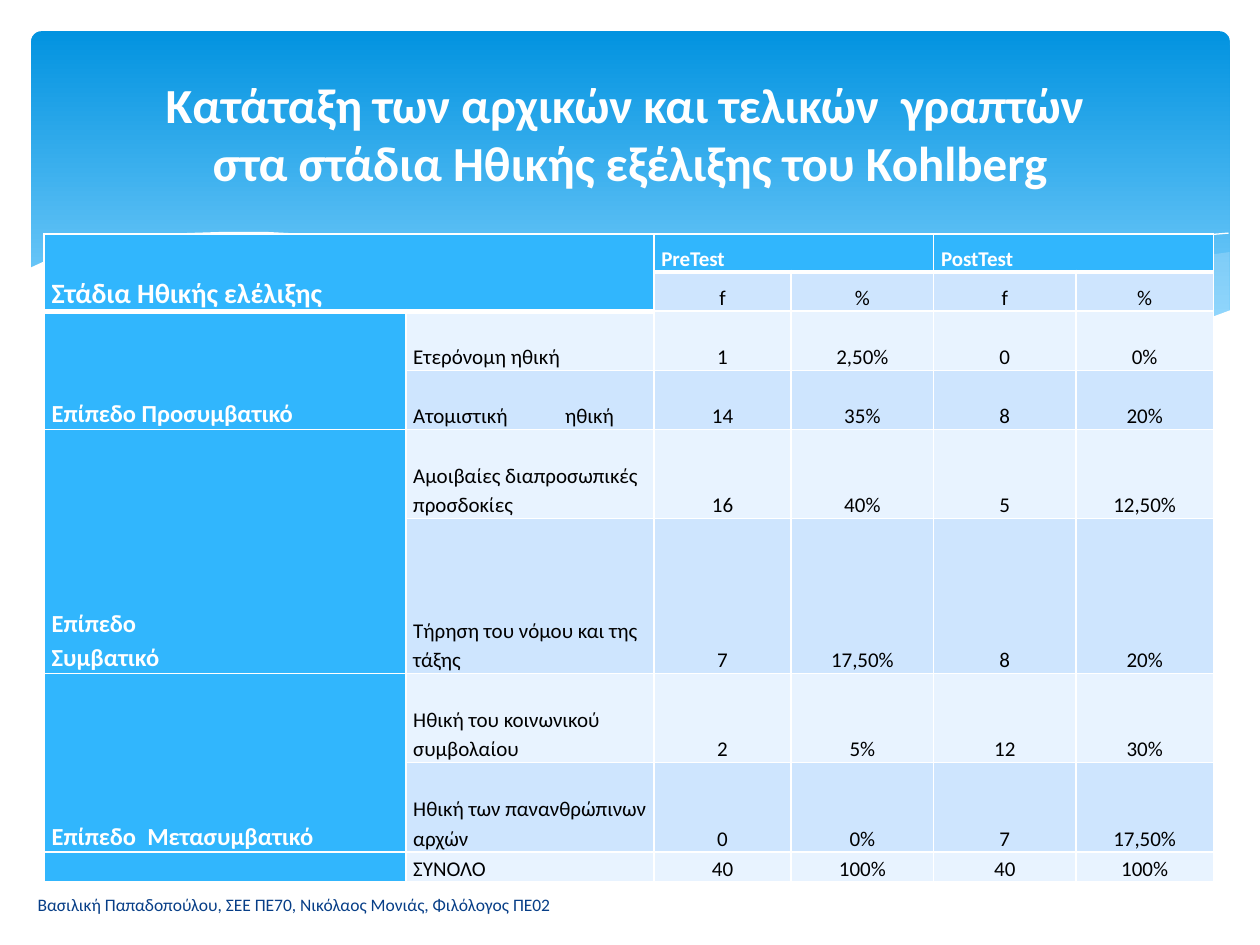
from dataclasses import dataclass
from typing import Optional

from lxml.etree import SubElement
from pptx import Presentation
from pptx.dml.color import RGBColor
from pptx.enum.shapes import MSO_SHAPE
from pptx.enum.text import MSO_ANCHOR, MSO_AUTO_SIZE, PP_ALIGN
from pptx.oxml.ns import qn
from pptx.util import Cm, Pt

FONT = "Calibri"
WHITE, BLACK, NAVY = "FFFFFF", "000000", "073E87"
ACCENT, BAND_DARK, BAND_LIGHT, MIST = "31B6FD", "CEE5FE", "E8F3FF", "C6E7FC"
WAVE_UNIT = Cm(2.54) / 100  # wave points are hundredths of an inch


@dataclass
class Wave:
    points: list[tuple[int, int]]
    fill: Optional[str] = None
    alpha: int = 100


@dataclass
class Label:
    row: int
    column: int
    text: str
    size: int = 12
    rows: int = 1
    columns: int = 1
    align: PP_ALIGN = PP_ALIGN.LEFT


WAVES = [
    Wave([(976, 200), (948, 204), (921, 210), (891, 216), (861, 223), (805, 237),
          (753, 248), (706, 257), (661, 265), (691, 269), (719, 272), (745, 275),
          (769, 277), (803, 278), (835, 277), (863, 275), (889, 272), (913, 267),
          (935, 262), (949, 257), (976, 247)], MIST, 29),
    Wave([(893, 273), (866, 269), (807, 260), (741, 247), (668, 231), (613, 218),
          (569, 208), (528, 200), (489, 194), (442, 189), (399, 186), (361, 185),
          (328, 187), (286, 191), (323, 196), (362, 203), (404, 211), (449, 222),
          (530, 240), (601, 255), (650, 264), (695, 270), (736, 275), (773, 277),
          (807, 278), (838, 278), (867, 276)], MIST, 40),
    Wave([(309, 195), (335, 191), (363, 189), (401, 187), (450, 188), (489, 190),
          (533, 194), (582, 200), (636, 208), (695, 219), (760, 233), (831, 251),
          (907, 272)]),
    Wave([(613, 257), (653, 246), (695, 235), (748, 223), (806, 210), (866, 199),
          (910, 192), (951, 187), (975, 185)]),
    Wave([(977, 246), (950, 256), (920, 265), (887, 271), (850, 275), (809, 277),
          (761, 275), (708, 270), (648, 262), (579, 250), (503, 233), (447, 220),
          (391, 207), (340, 197), (292, 190), (250, 186), (211, 184), (177, 184),
          (146, 185), (119, 187), (95, 191), (76, 195), (59, 199), (46, 203),
          (36, 207), (23, 213), (23, 329), (977, 329)], WHITE),
]

COLUMN_WIDTHS = [7.29, 5, 2.77, 2.87, 2.87, 2.77]
ROW_HEIGHTS = [0.76, 0.61, 1.19, 1.19, 1.8, 3.12, 1.8, 1.8, 0.61]

HEADINGS = [
    Label(0, 0, "Στάδια Ηθικής ελέλιξης", 16, rows=2, columns=2),
    Label(0, 2, "PreTest", columns=2),
    Label(0, 4, "PostTest", columns=2, align=PP_ALIGN.JUSTIFY),
    Label(2, 0, "Επίπεδο Προσυμβατικό", 14, rows=2),
    Label(4, 0, "Επίπεδο\nΣυμβατικό", 14, rows=2),
    Label(6, 0, "Επίπεδο  Μετασυμβατικό", 14, rows=2),
    Label(8, 0, ""),
]
STAGES = [
    ("", "f", "%", "f", "%"),
    ("Ετερόνομη ηθική", "1", "2,50%", "0", "0%"),
    ("Ατομιστική\tηθική", "14", "35%", "8", "20%"),
    ("Αμοιβαίες διαπροσωπικές προσδοκίες", "16", "40%", "5", "12,50%"),
    ("Τήρηση του νόμου και της τάξης", "7", "17,50%", "8", "20%"),
    ("Ηθική του κοινωνικού συμβολαίου", "2", "5%", "12", "30%"),
    ("Ηθική των πανανθρώπινων αρχών", "0", "0%", "7", "17,50%"),
    ("ΣΥΝΟΛΟ", "40", "100%", "40", "100%"),
]


def rgb(color: str) -> RGBColor:
    return RGBColor.from_string(color)


def paint(target, color: str) -> None:
    target.fill.solid()
    target.fill.fore_color.rgb = rgb(color)


def style(paragraph, size: int, color: str, bold: bool = False, align=PP_ALIGN.LEFT) -> None:
    font = paragraph.font
    font.name, font.size, font.bold = FONT, Pt(size), bold
    font.color.rgb = rgb(color)
    paragraph.alignment = align


def draw_banner(shapes) -> None:
    banner = shapes.add_shape(MSO_SHAPE.ROUNDED_RECTANGLE, Cm(0.63), Cm(0.63), Cm(24.16), Cm(6.86))
    banner.adjustments[0] = 0.03
    banner.shadow.inherit = False
    banner.line.fill.background()
    banner.fill.gradient()
    banner.fill.gradient_angle = 270
    for stop, position, color in zip(banner.fill.gradient_stops, (0, 0.9), ("0293E0", "83D3FE")):
        stop.position = position
        stop.color.rgb = rgb(color)


def draw_wave(shapes, wave: Wave) -> None:
    builder = shapes.build_freeform(*wave.points[0], scale=WAVE_UNIT)
    builder.add_line_segments(wave.points[1:], close=wave.fill is not None)
    curve = builder.convert_to_shape()
    curve.shadow.inherit = False
    if wave.fill is None:
        curve.fill.background()
        curve.line.color.rgb = rgb(WHITE)
        curve.line.width = Pt(0)
        return
    curve.line.fill.background()
    paint(curve, wave.fill)
    if wave.alpha < 100:
        color = curve.element.spPr.find(qn("a:solidFill"))[0]
        SubElement(color, qn("a:alpha"), val=str(wave.alpha * 1000))


def add_borders(cell, bottom: int) -> None:
    """Must run before the cell is filled: borders precede the fill in the XML."""
    properties = cell._tc.get_or_add_tcPr()
    for side, width in (("L", 1), ("R", 1), ("T", 1), ("B", bottom)):
        border = SubElement(properties, qn(f"a:ln{side}"), w=str(Pt(width)))
        SubElement(SubElement(border, qn("a:solidFill")), qn("a:srgbClr"), val=WHITE)


def write_cell(table, label: Label, color: str, bold: bool = False) -> None:
    cell = table.cell(label.row, label.column)
    cell.text = label.text
    for paragraph in cell.text_frame.paragraphs:
        style(paragraph, label.size, color, bold, label.align)
        paragraph.line_spacing = 1.15
        if "\t" in label.text:
            stops = paragraph._p.get_or_add_pPr().find(qn("a:defRPr"))
            tabs = stops.makeelement(qn("a:tabLst"))
            SubElement(tabs, qn("a:tab"), pos=str(Cm(3.06)), algn="l")
            stops.addprevious(tabs)


def draw_table(shapes) -> None:
    table = shapes.add_table(len(ROW_HEIGHTS), len(COLUMN_WIDTHS), Cm(0.89), Cm(4.72),
                             Cm(sum(COLUMN_WIDTHS)), Cm(sum(ROW_HEIGHTS))).table
    table.first_row = table.horz_banding = False
    for column, width in zip(table.columns, COLUMN_WIDTHS):
        column.width = Cm(width)
    for r, (row, height) in enumerate(zip(table.rows, ROW_HEIGHTS)):
        row.height = Cm(height)
        for c, cell in enumerate(row.cells):
            heading = r == 0 or c == 0 or (r == 1 and c == 1)
            add_borders(cell, 3 if heading and r < 2 else 1)
            paint(cell, ACCENT if heading else BAND_DARK if r % 2 else BAND_LIGHT)
            cell.vertical_anchor = MSO_ANCHOR.BOTTOM
            cell.margin_left = cell.margin_right = Cm(0.15)
            cell.margin_top = cell.margin_bottom = 0
    for r, stage in enumerate(STAGES, start=1):
        for c, text in enumerate(stage, start=1):
            align = PP_ALIGN.CENTER if c > 1 else PP_ALIGN.LEFT
            write_cell(table, Label(r, c, text, align=align), BLACK)
    for label in HEADINGS:
        write_cell(table, label, WHITE, bold=True)
        if label.rows * label.columns > 1:
            last = table.cell(label.row + label.rows - 1, label.column + label.columns - 1)
            table.cell(label.row, label.column).merge(last)


def draw_authors(shapes) -> None:
    frame = shapes.add_textbox(Cm(0.51), Cm(17.73), Cm(18.77), Cm(1.02)).text_frame
    frame.word_wrap = True
    frame.vertical_anchor = MSO_ANCHOR.MIDDLE
    frame.text = "Βασιλική Παπαδοπούλου, ΣΕΕ ΠΕ70, Νικόλαος Μονιάς, Φιλόλογος ΠΕ02"
    style(frame.paragraphs[0], 10, NAVY)


def place_title(title) -> None:
    title.left, title.top, title.width, title.height = Cm(1.27), Cm(0.94), Cm(22.86), Cm(3.48)
    frame = title.text_frame
    frame.auto_size = MSO_AUTO_SIZE.NONE
    frame.vertical_anchor = MSO_ANCHOR.MIDDLE
    frame.text = "Κατάταξη των αρχικών και τελικών  γραπτών \vστα στάδια Ηθικής εξέλιξης του Kohlberg"
    style(frame.paragraphs[0], 28, WHITE, True, PP_ALIGN.CENTER)
    title.element.getparent().append(title.element)  # bring to front


def main() -> None:
    deck = Presentation()
    deck.slide_width, deck.slide_height = Cm(25.4), Cm(19.05)
    shapes = deck.slides.add_slide(deck.slide_layouts[5]).shapes
    draw_banner(shapes)
    for wave in WAVES:
        draw_wave(shapes, wave)
    draw_table(shapes)
    draw_authors(shapes)
    place_title(shapes.title)
    deck.save("out.pptx")


if __name__ == "__main__":
    main()
